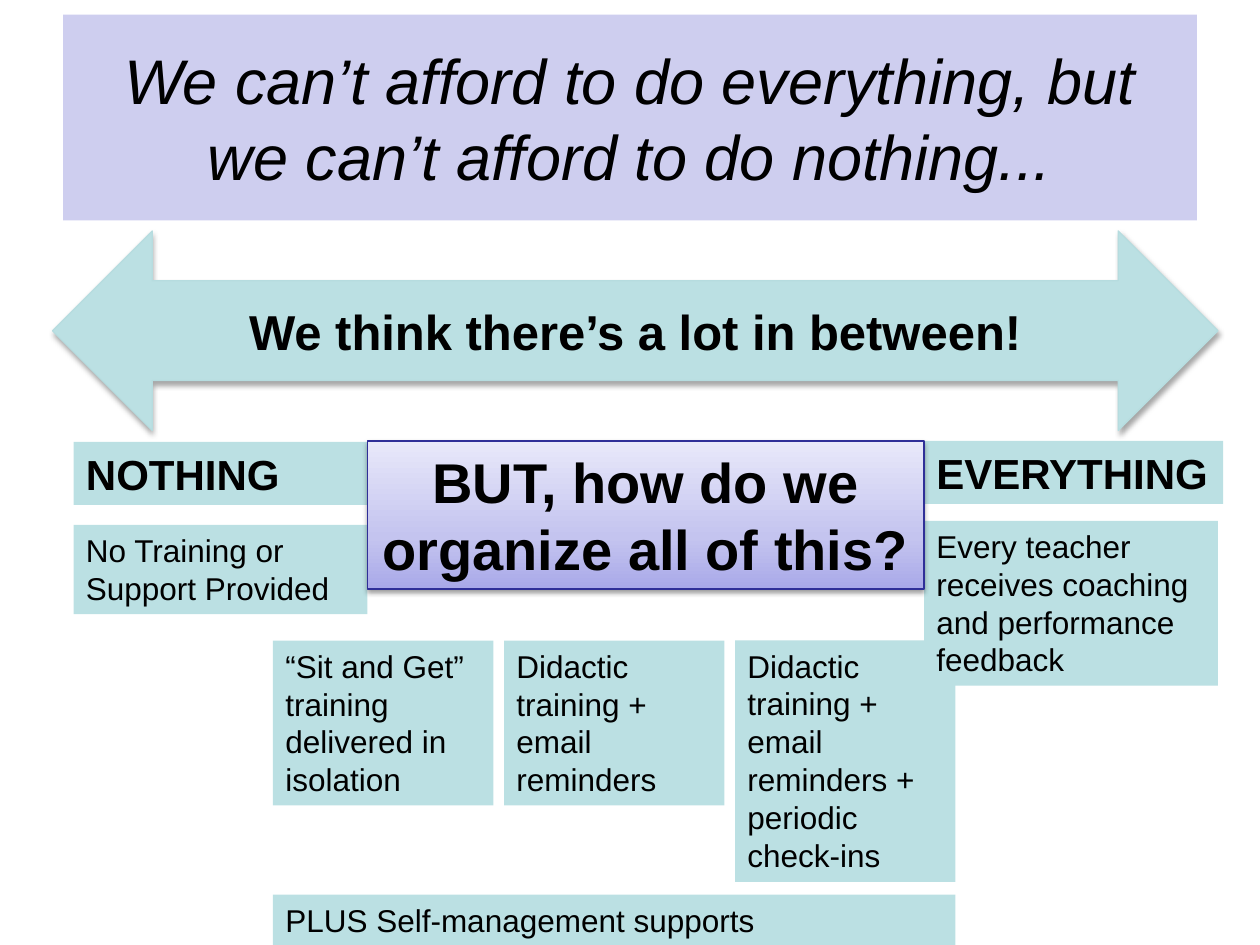
"""Build the slide on the range of training support between nothing and everything."""
from copy import deepcopy

from lxml.etree import SubElement
from pptx import Presentation
from pptx.dml.color import RGBColor
from pptx.enum.shapes import MSO_SHAPE
from pptx.enum.text import MSO_ANCHOR, MSO_AUTO_SIZE, PP_ALIGN
from pptx.oxml.ns import qn
from pptx.util import Pt

PX = 914400 // 120
TEAL = "BBE0E3"
color = RGBColor.from_string


def write(shape, text, size=18, bold=False, italic=False, align=PP_ALIGN.LEFT,
          anchor=MSO_ANCHOR.TOP, wrap=True):
    frame = shape.text_frame
    frame.word_wrap = wrap
    frame.auto_size = MSO_AUTO_SIZE.NONE
    frame.vertical_anchor = anchor
    paragraph = frame.paragraphs[0]
    paragraph.alignment = align
    run = paragraph.add_run()
    run.text = text
    run.font.name = "Arial"
    run.font.size = Pt(size)
    run.font.bold = bold
    run.font.italic = italic
    run.font.color.rgb = color("000000")


def add_panel(kind, left, top, width, height):
    shape = slide.shapes.add_shape(kind, left * PX, top * PX, width * PX, height * PX)
    shape.shadow.inherit = False
    shape.fill.solid()
    shape.fill.fore_color.rgb = color(TEAL)
    shape.line.fill.background()
    return shape


presentation = Presentation()
presentation.slide_width = 1200 * PX
presentation.slide_height = 900 * PX
slide = presentation.slides.add_slide(presentation.slide_layouts[5])

title = slide.shapes.title
title.left, title.top, title.width, title.height = 60 * PX, 14 * PX, 1080 * PX, 196 * PX
title.fill.solid()
title.fill.fore_color.rgb = color("CECEEF")
write(title, "We can’t afford to do everything, but we can’t afford to do nothing...",
      size=36, italic=True, align=PP_ALIGN.CENTER, anchor=MSO_ANCHOR.MIDDLE)

arrow = add_panel(MSO_SHAPE.LEFT_RIGHT_ARROW, 50, 220, 1110, 190)
write(arrow, "We think there’s a lot in between!", size=28, bold=True,
      align=PP_ALIGN.CENTER, anchor=MSO_ANCHOR.MIDDLE)

headings = [
    ("NOTHING", 70, 421, 280, True),
    ("EVERYTHING", 880, 420, 285, False),
]
for text, left, top, width, wrap in headings:
    write(add_panel(MSO_SHAPE.RECTANGLE, left, top, width, 60), text,
          size=24, bold=True, wrap=wrap)

options = [
    ("Didactic training + email reminders + periodic check-ins", 700, 610, 210, 230),
    ("No Training or Support Provided", 70, 500, 280, 85),
    ("Every teacher receives coaching and performance feedback", 880, 496, 280, 157),
    ("“Sit and Get” training delivered in isolation", 260, 610, 210, 157),
    ("Didactic training + email reminders", 480, 610, 210, 157),
    ("PLUS Self-management supports", 260, 852, 650, 48),
]
for text, *place in options:
    write(add_panel(MSO_SHAPE.RECTANGLE, *place), text)

question = add_panel(MSO_SHAPE.RECTANGLE, 350, 420, 530, 141)
write(question, "BUT, how do we organize all of this?", size=32, bold=True,
      align=PP_ALIGN.CENTER)
question.fill.gradient()
question.fill.gradient_angle = 90
stop_list = question._element.spPr.find(qn("a:gradFill")).find(qn("a:gsLst"))
stop_list.insert(1, deepcopy(stop_list[0]))
shades = [(0, "A9A9E9"), (0.35, "C4C4EF"), (1, "E8E8FA")]
for stop, (position, shade) in zip(question.fill.gradient_stops, shades):
    stop.position = position
    stop.color.rgb = color(shade)

for shape, outline, opacity, distance in [(arrow, "B6DCDF", 35, 1.8),
                                          (question, "2F2F98", 38, 1.6)]:
    shape.line.color.rgb = color(outline)
    shape.line.width = Pt(0.75)
    effects = shape._element.spPr.find(qn("a:effectLst"))
    shadow = SubElement(effects, qn("a:outerShdw"), blurRad=str(Pt(3.1)),
                        dist=str(Pt(distance)), dir="5400000", rotWithShape="0")
    shadow_color = SubElement(shadow, qn("a:srgbClr"), val="000000")
    SubElement(shadow_color, qn("a:alpha"), val=str(opacity * 1000))

presentation.save("out.pptx")
